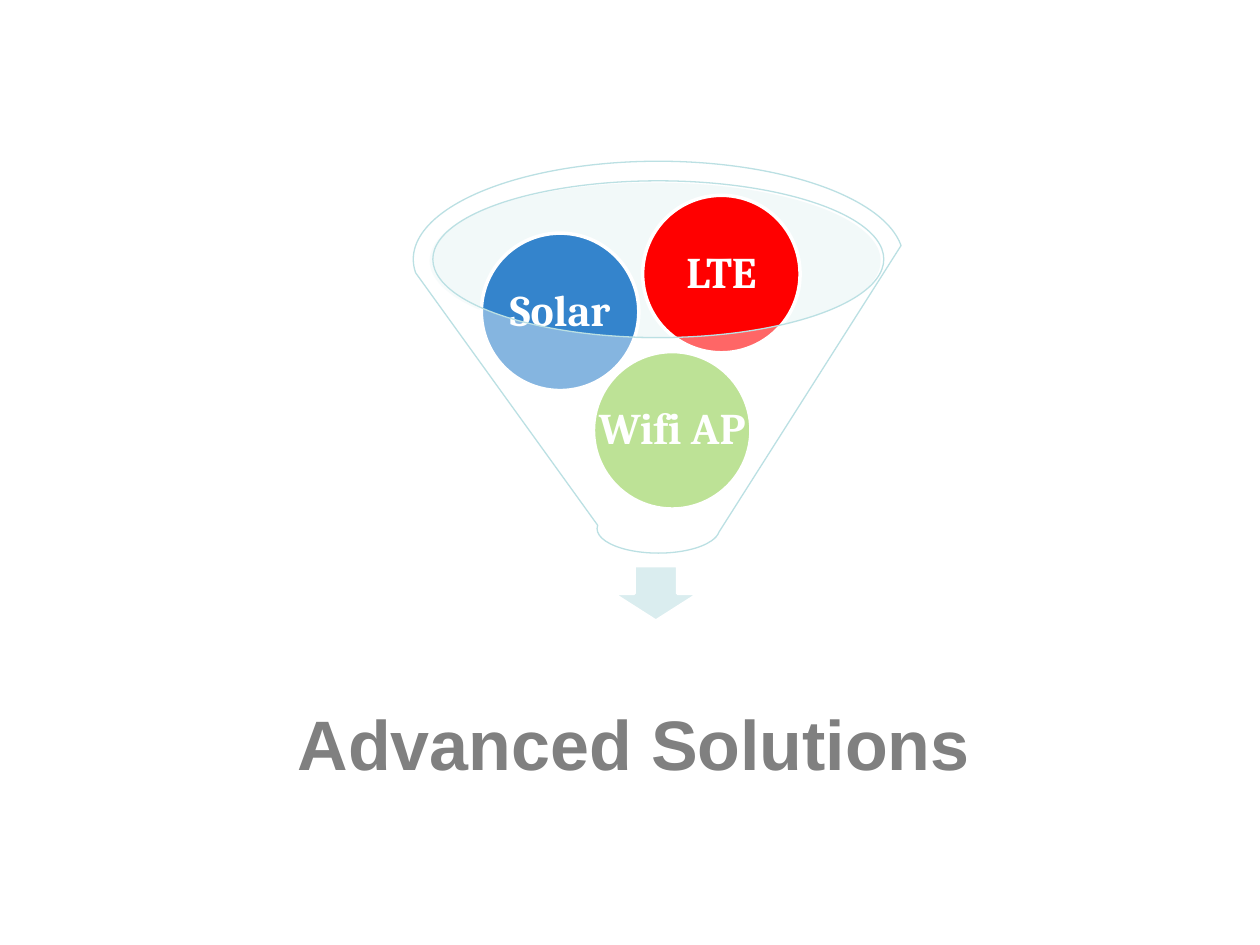
from dataclasses import dataclass
from typing import Optional

from lxml.etree import SubElement
from pptx import Presentation
from pptx.dml.color import RGBColor
from pptx.enum.shapes import MSO_SHAPE
from pptx.enum.text import MSO_ANCHOR, MSO_AUTO_SIZE, PP_ALIGN
from pptx.oxml.ns import qn
from pptx.util import Inches, Pt

COLORS = {
    "white": "FFFFFF",
    "title": "808080",
    "mouth": "E0F0F2",
    "arrow": "DAEDEF",
    "rim": "BBE0E3",
    "green": "92D050",
    "blue": "3484CC",
    "red": "FF0000",
}
BALL_SIZE = 1.25
BALL_INSET = 0.03


@dataclass(frozen=True)
class Box:
    left: float
    top: float
    width: float
    height: float

    def lengths(self) -> tuple:
        return tuple(Inches(v) for v in (self.left, self.top, self.width, self.height))


@dataclass(frozen=True)
class Ball:
    label: str
    left: float
    top: float
    color: str


BALLS = [
    Ball("Wifi AP", 4.71, 2.79, "green"),
    Ball("Solar", 3.82, 1.85, "blue"),
    Ball("LTE", 5.1, 1.55, "red"),
]


def rgb(name: str) -> RGBColor:
    return RGBColor.from_string(COLORS[name])


def add_figure(slide, kind: MSO_SHAPE, box: Box, fill: str, line: Optional[str] = None,
               line_width: float = 2, opacity: int = 100) -> None:
    figure = slide.shapes.add_shape(kind, *box.lengths())
    figure.shadow.inherit = False
    figure.fill.solid()
    figure.fill.fore_color.rgb = rgb(fill)
    if opacity < 100:
        color = figure.fill._xPr.find(qn("a:solidFill"))[0]
        SubElement(color, qn("a:alpha"), val=str(opacity * 1000))
    if line:
        figure.line.color.rgb = rgb(line)
        figure.line.width = Pt(line_width)
    else:
        figure.line.fill.background()


def add_label(slide, box: Box, text: str, font: str, size: float, color: str):
    frame = slide.shapes.add_textbox(*box.lengths()).text_frame
    paragraph = frame.paragraphs[0]
    paragraph.alignment = PP_ALIGN.CENTER
    run = paragraph.add_run()
    run.text = text
    run.font.name = font
    run.font.size = Pt(size)
    run.font.bold = True
    run.font.color.rgb = rgb(color)
    return frame


def add_ball(slide, ball: Ball) -> None:
    box = Box(ball.left, ball.top, BALL_SIZE, BALL_SIZE)
    add_figure(slide, MSO_SHAPE.OVAL, box, ball.color, "white")
    # The label uses the full square, so that it stays on one line
    frame = add_label(slide, box, ball.label, "Cambria", 25, "white")
    frame.word_wrap = True
    frame.vertical_anchor = MSO_ANCHOR.MIDDLE
    frame.margin_left = frame.margin_right = Inches(BALL_INSET)
    frame.margin_top = frame.margin_bottom = Inches(BALL_INSET)
    frame.paragraphs[0].line_spacing = 0.9


def main() -> None:
    presentation = Presentation()
    presentation.slide_width = Inches(10)
    presentation.slide_height = Inches(7.5)
    slide = presentation.slides.add_slide(presentation.slide_layouts[6])

    # Outcome below the funnel
    outcome = add_label(slide, Box(2.26, 5.51, 5.54, 0.77), "Advanced Solutions",
                        "Arial", 40, "title")
    outcome.word_wrap = False
    outcome.auto_size = MSO_AUTO_SIZE.SHAPE_TO_FIT_TEXT

    # Funnel mouth and outlet arrow
    add_figure(slide, MSO_SHAPE.OVAL, Box(3.41, 1.45, 3.58, 1.24), "mouth", opacity=40)
    add_figure(slide, MSO_SHAPE.DOWN_ARROW, Box(4.86, 4.49, 0.69, 0.44), "arrow", "white")

    # Ingredients
    for ball in BALLS:
        add_ball(slide, ball)

    # Translucent funnel over the ingredients
    add_figure(slide, MSO_SHAPE.FUNNEL, Box(3.28, 1.28, 3.89, 3.11), "white", "rim",
               line_width=0.75, opacity=40)

    presentation.save("out.pptx")


if __name__ == "__main__":
    main()
